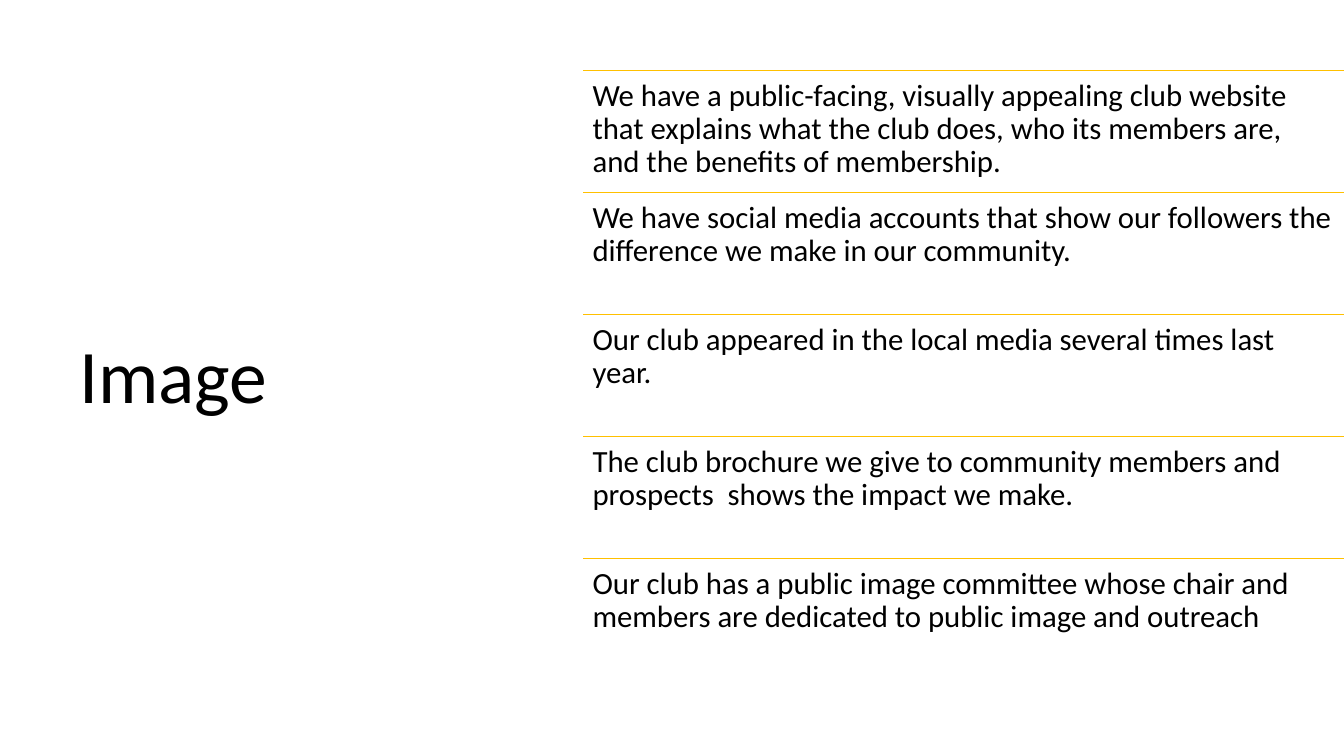
from lxml.etree import SubElement
from pptx import Presentation
from pptx.dml.color import RGBColor
from pptx.enum.shapes import MSO_CONNECTOR
from pptx.enum.text import MSO_ANCHOR
from pptx.oxml.ns import qn
from pptx.util import Pt

BLACK = RGBColor(0x00, 0x00, 0x00)
GOLD = RGBColor(0xFF, 0xC0, 0x00)
SLIDE_WIDTH, SLIDE_HEIGHT = 960, 540
LIST_LEFT, LIST_TOP, ROW_HEIGHT = 416.7, 50.4, 87.1
LIST_WIDTH = SLIDE_WIDTH - LIST_LEFT

STATEMENTS = [
    "We have a public-facing, visually appealing club website that explains "
    "what the club does, who its members are, and the benefits of membership.",
    "We have social media accounts that show our followers the difference "
    "we make in our community.",
    "Our club appeared in the local media several times last year.",
    "The club brochure we give to community members and prospects  shows "
    "the impact we make.",
    "Our club has a public image committee whose chair and members are "
    "dedicated to public image and outreach",
]

prs = Presentation()
prs.slide_width, prs.slide_height = Pt(SLIDE_WIDTH), Pt(SLIDE_HEIGHT)
slide = prs.slides.add_slide(prs.slide_layouts[6])


def add_text(text, left, top, width, height, size, frame_format):
    box = slide.shapes.add_textbox(Pt(left), Pt(top), Pt(width), Pt(height))
    frame = box.text_frame
    frame.word_wrap = True
    for attribute, value in frame_format.items():
        setattr(frame, attribute, value)
    paragraph = frame.paragraphs[0]
    paragraph.line_spacing = 0.9
    run = paragraph.add_run()
    run.text = text
    run.font.name = "Calibri"
    run.font.size = Pt(size)
    run.font.color.rgb = BLACK


add_text("Image", 49.7, 50.4, 269.3, 439.9, 54,
         {"vertical_anchor": MSO_ANCHOR.MIDDLE})

statement_format = {"vertical_anchor": MSO_ANCHOR.TOP}
for side in ("left", "top", "right", "bottom"):
    statement_format[f"margin_{side}"] = Pt(6.6)

for row, statement in enumerate(STATEMENTS):
    top = LIST_TOP + row * ROW_HEIGHT
    rule = slide.shapes.add_connector(
        MSO_CONNECTOR.STRAIGHT, Pt(LIST_LEFT), Pt(top), Pt(SLIDE_WIDTH), Pt(top))
    rule.line.color.rgb = GOLD
    rule.line.width = Pt(1)
    SubElement(rule._element.spPr, qn("a:effectLst"))
    add_text(statement, LIST_LEFT, top, LIST_WIDTH, ROW_HEIGHT, 22,
             statement_format)

prs.save("out.pptx")
